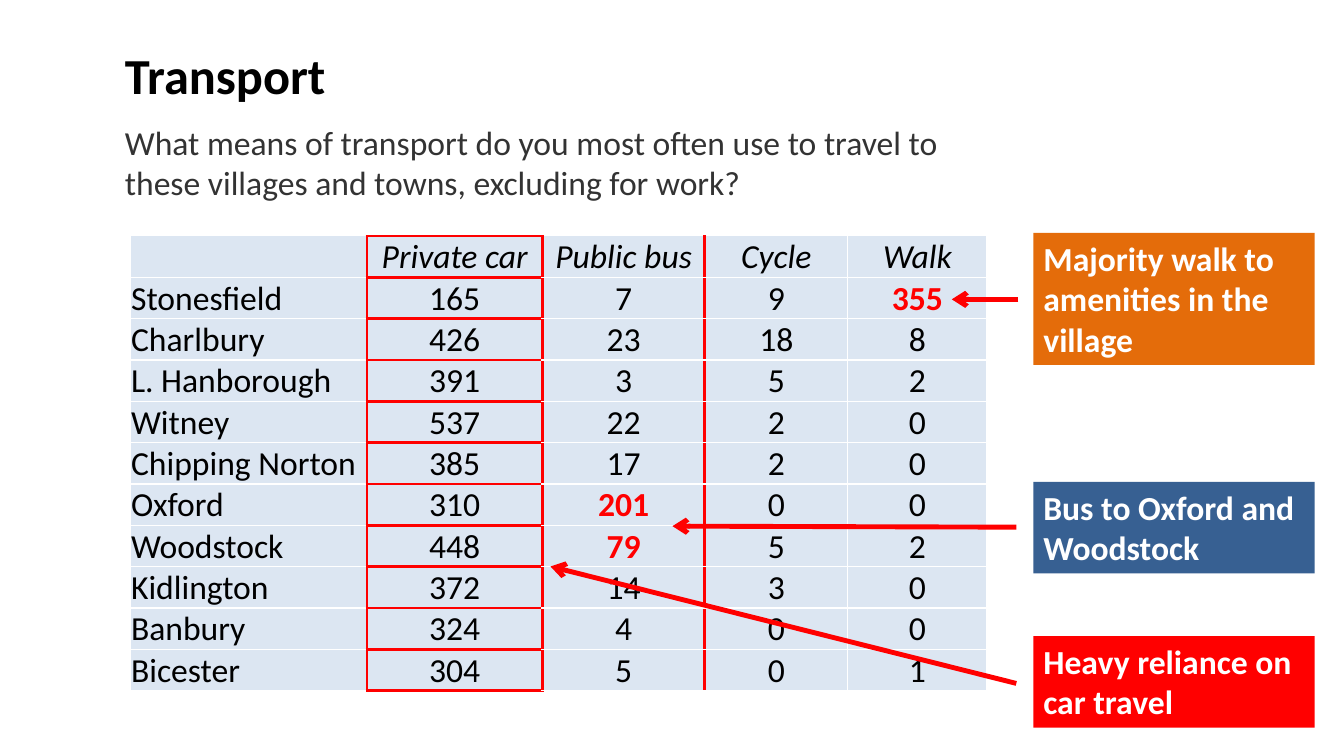
from lxml import etree
from pptx import Presentation
from pptx import util as u
from pptx.dml.color import RGBColor
from pptx.enum import shapes, text
from pptx.oxml import ns

THEME = {
    "font": "Calibri",
    "title_size": 36,
    "body_size": 24,
    "black": "000000",
    "question": "333333",
    "white": "FFFFFF",
    "red": "FF0000",
    "cell": "DCE6F2",
    "orange": "E46C0A",
    "blue": "376092",
    "thin": 1,
    "thick": 2.25,
    "arrow": 3.5,
}

TITLE = "Transport"
QUESTION = (
    "What means of transport do you most often use to travel to "
    "these villages and towns, excluding for work?"
)
TRIPS = [
    ("", "Private car", "Public bus", "Cycle", "Walk"),
    ("Stonesfield", 165, 7, 9, 355),
    ("Charlbury", 426, 23, 18, 8),
    ("L. Hanborough", 391, 3, 5, 2),
    ("Witney", 537, 22, 2, 0),
    ("Chipping Norton", 385, 17, 2, 0),
    ("Oxford", 310, 201, 0, 0),
    ("Woodstock", 448, 79, 5, 2),
    ("Kidlington", 372, 14, 3, 0),
    ("Banbury", 324, 4, 0, 0),
    ("Bicester", 304, 5, 0, 1),
]
HIGHLIGHTS = {("Stonesfield", "Walk"), ("Oxford", "Public bus"), ("Woodstock", "Public bus")}
COLUMN_WIDTHS = [2.35, 1.74, 1.61, 1.42, 1.38]
TABLE_LEFT, TABLE_TOP, TABLE_HEIGHT = 1.29, 2.34, 4.49
RED_EDGES = {0: "R", 1: "LRTB", 2: "LR", 3: "L"}

CALLOUT_LEFT, CALLOUT_WIDTH = 10.25, 2.79
CALLOUTS = [
    ("Majority walk to amenities in the village", "orange", 2.31, 1.31, (10.1, 2.97), (9.44, 2.97)),
    ("Bus to Oxford and Woodstock", "blue", 4.78, 0.91, (10.08, 5.23), (6.67, 5.22)),
    ("Heavy reliance on car travel", "red", 6.31, 0.91, (10.08, 6.78), (5.46, 5.62)),
]


def color(name):
    return RGBColor.from_string(THEME[name])


def apply(target, values):
    for name, value in values.items():
        setattr(target, name, value)


def write(paragraph, content, color_name, size="body_size", **formats):
    run = paragraph.add_run()
    run.text = str(content)
    apply(run.font, {"name": THEME["font"], "size": u.Pt(THEME[size]), **formats})
    run.font.color.rgb = color(color_name)


def add_text_box(slide, left, top, width, height):
    box = slide.shapes.add_textbox(*map(u.Inches, (left, top, width, height)))
    box.text_frame.word_wrap = True
    return box


def set_borders(cell, red_edges):
    properties = cell._tc.get_or_add_tcPr()
    for edge in "LRTB":
        name, weight = ("red", "thick") if edge in red_edges else ("white", "thin")
        line = etree.SubElement(properties, ns.qn(f"a:ln{edge}"), w=str(u.Pt(THEME[weight])))
        fill = etree.SubElement(line, ns.qn("a:solidFill"))
        etree.SubElement(fill, ns.qn("a:srgbClr"), val=THEME[name])


def add_trips_table(slide):
    frame = slide.shapes.add_table(
        len(TRIPS), len(COLUMN_WIDTHS),
        *map(u.Inches, (TABLE_LEFT, TABLE_TOP, sum(COLUMN_WIDTHS), TABLE_HEIGHT)),
    )
    table = frame.table
    apply(table, {"first_row": False, "horz_banding": False})
    for column, width in zip(table.columns, COLUMN_WIDTHS):
        column.width = u.Inches(width)
    for row in table.rows:
        row.height = u.Inches(TABLE_HEIGHT / len(TRIPS))

    margin = u.Inches(0.01)
    cell_format = {
        "margin_left": margin, "margin_top": margin, "margin_right": margin,
        "margin_bottom": 0, "vertical_anchor": text.MSO_ANCHOR.BOTTOM,
    }
    for row_index, values in enumerate(TRIPS):
        for column_index, value in enumerate(values):
            cell = table.cell(row_index, column_index)
            apply(cell, cell_format)
            set_borders(cell, RED_EDGES.get(column_index, ""))
            cell.fill.solid()
            cell.fill.fore_color.rgb = color("cell")
            paragraph = cell.text_frame.paragraphs[0]
            if column_index:
                paragraph.alignment = text.PP_ALIGN.CENTER
            if value != "":
                marked = (values[0], TRIPS[0][column_index]) in HIGHLIGHTS
                write(paragraph, value, "red" if marked else "black",
                      bold=marked, italic=row_index == 0)


def add_arrow(slide, start, end):
    arrow = slide.shapes.add_connector(
        shapes.MSO_CONNECTOR.STRAIGHT, *map(u.Inches, (*start, *end))
    )
    arrow.line.color.rgb = color("red")
    arrow.line.width = u.Pt(THEME["arrow"])
    etree.SubElement(arrow.line._get_or_add_ln(), ns.qn("a:tailEnd"), type="arrow")
    etree.SubElement(arrow._element.spPr, ns.qn("a:effectLst"))


def main():
    presentation = Presentation()
    apply(presentation, {"slide_width": u.Inches(13.33), "slide_height": u.Inches(7.5)})
    slide = presentation.slides.add_slide(presentation.slide_layouts[6])

    heading = add_text_box(slide, 1.14, 0.39, 8.92, 2.09).text_frame
    title = heading.paragraphs[0]
    title.space_after = u.Pt(12)
    write(title, TITLE, "black", "title_size", bold=True)
    write(heading.add_paragraph(), QUESTION, "question")

    add_trips_table(slide)

    for message, fill, top, height, start, end in CALLOUTS:
        box = add_text_box(slide, CALLOUT_LEFT, top, CALLOUT_WIDTH, height)
        box.fill.solid()
        box.fill.fore_color.rgb = color(fill)
        write(box.text_frame.paragraphs[0], message, "white", bold=True)
        add_arrow(slide, start, end)

    presentation.save("out.pptx")


if __name__ == "__main__":
    main()
